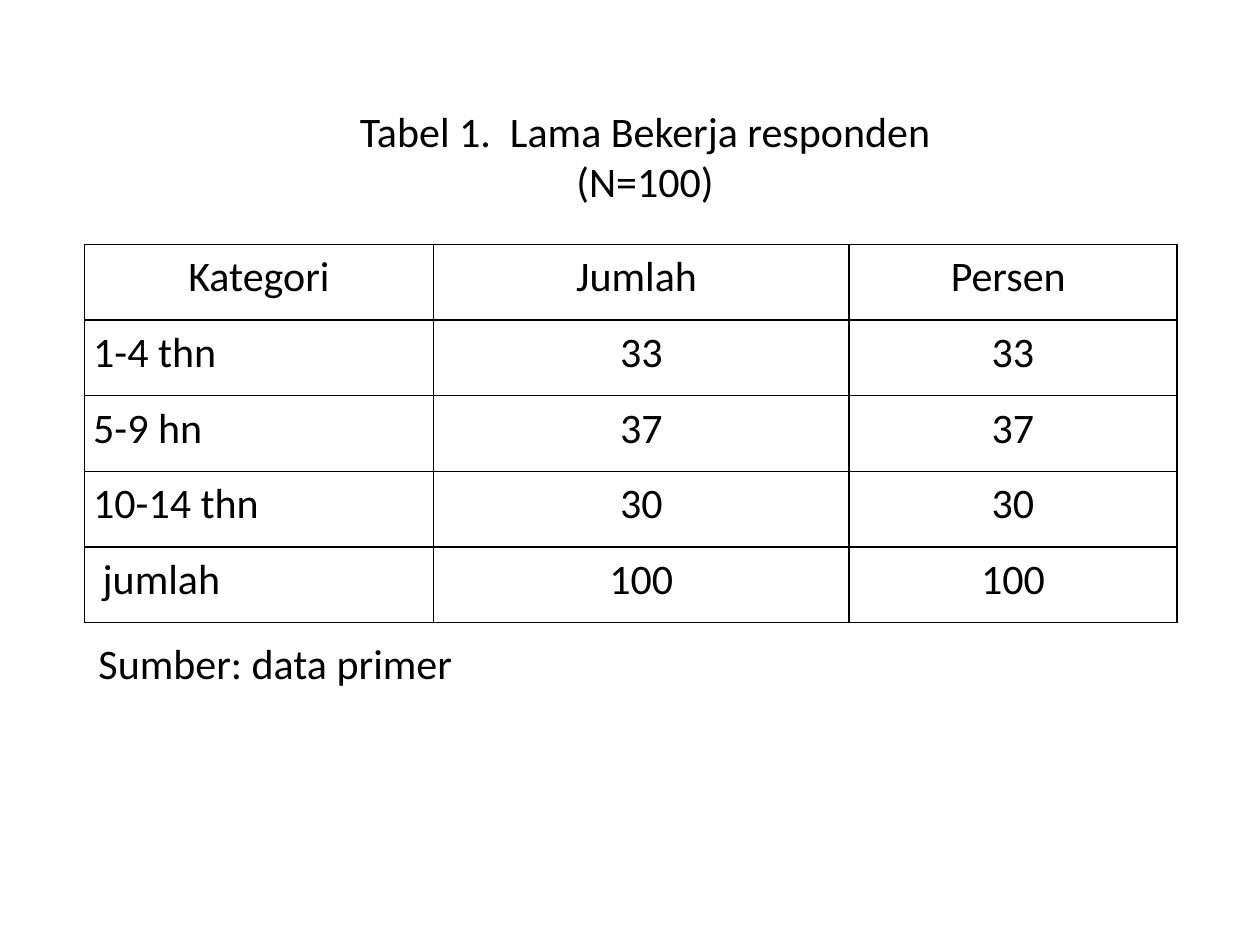
from lxml import etree
from pptx import Presentation
from pptx.dml.color import RGBColor
from pptx.enum.text import MSO_ANCHOR as Anchor, MSO_AUTO_SIZE as AutoSize, PP_ALIGN as Align
from pptx.oxml.ns import qn
from pptx.util import Inches, Pt

COLORS = {"ink": "000000", "paper": "FFFFFF"}


def style_text(frame, align):
    for para in frame.paragraphs:
        para.alignment = align
        for span in para.runs:
            span.font.name = "Calibri"
            span.font.size = Pt(24)
            span.font.color.rgb = RGBColor.from_string(COLORS["ink"])


def add_borders(cell):
    props = cell._tc.get_or_add_tcPr()
    for index, side in enumerate(("a:lnL", "a:lnR", "a:lnT", "a:lnB")):
        line = etree.Element(qn(side), w=str(Pt(1)))
        fill = etree.SubElement(line, qn("a:solidFill"))
        etree.SubElement(fill, qn("a:srgbClr"), val=COLORS["ink"])
        props.insert(index, line)


deck = Presentation()
deck.slide_width, deck.slide_height = Inches(10), Inches(7.5)
page = deck.slides.add_slide(deck.slide_layouts[6])

# Table of working years
rows = [
    ("Kategori", "Jumlah ", "Persen "),
    ("1-4 thn", "33", "33"),
    ("5-9 hn", "37", "37"),
    ("10-14 thn", "30", "30"),
    (" jumlah", "100", "100"),
]
widths = (2.77, 3.3, 2.6)
table = page.shapes.add_table(len(rows), len(widths), Inches(0.67), Inches(1.94),
                              Inches(8.66), Inches(2.99)).table
table.horz_banding = table.first_row = False
for column, width in zip(table.columns, widths):
    column.width = Inches(width)
for r, values in enumerate(rows):
    table.rows[r].height = Inches(0.6)
    for c, value in enumerate(values):
        cell = table.cell(r, c)
        cell.margin_left = cell.margin_right = Inches(0.07)
        cell.margin_top = cell.margin_bottom = 0
        cell.fill.background()
        add_borders(cell)
        cell.text_frame.text = value
        cell.text_frame.paragraphs[0].line_spacing = 1.15
        style_text(cell.text_frame, Align.LEFT if r and c == 0 else Align.CENTER)

# Title and source note
captions = [
    ("Tabel 1.  Lama Bekerja responden\n(N=100)", (1.22, 0.78, 7.8, 0.91), Anchor.MIDDLE, True),
    ("Sumber: data primer", (0.67, 5.01, 3.03, 0.5), Anchor.TOP, False),
]
for text, place, anchor, wrap in captions:
    box = page.shapes.add_textbox(*map(Inches, place))
    frame = box.text_frame
    frame.text = text
    frame.word_wrap = wrap
    frame.auto_size = AutoSize.SHAPE_TO_FIT_TEXT
    frame.vertical_anchor = anchor
    style_text(frame, Align.CENTER)

deck.save("out.pptx")
